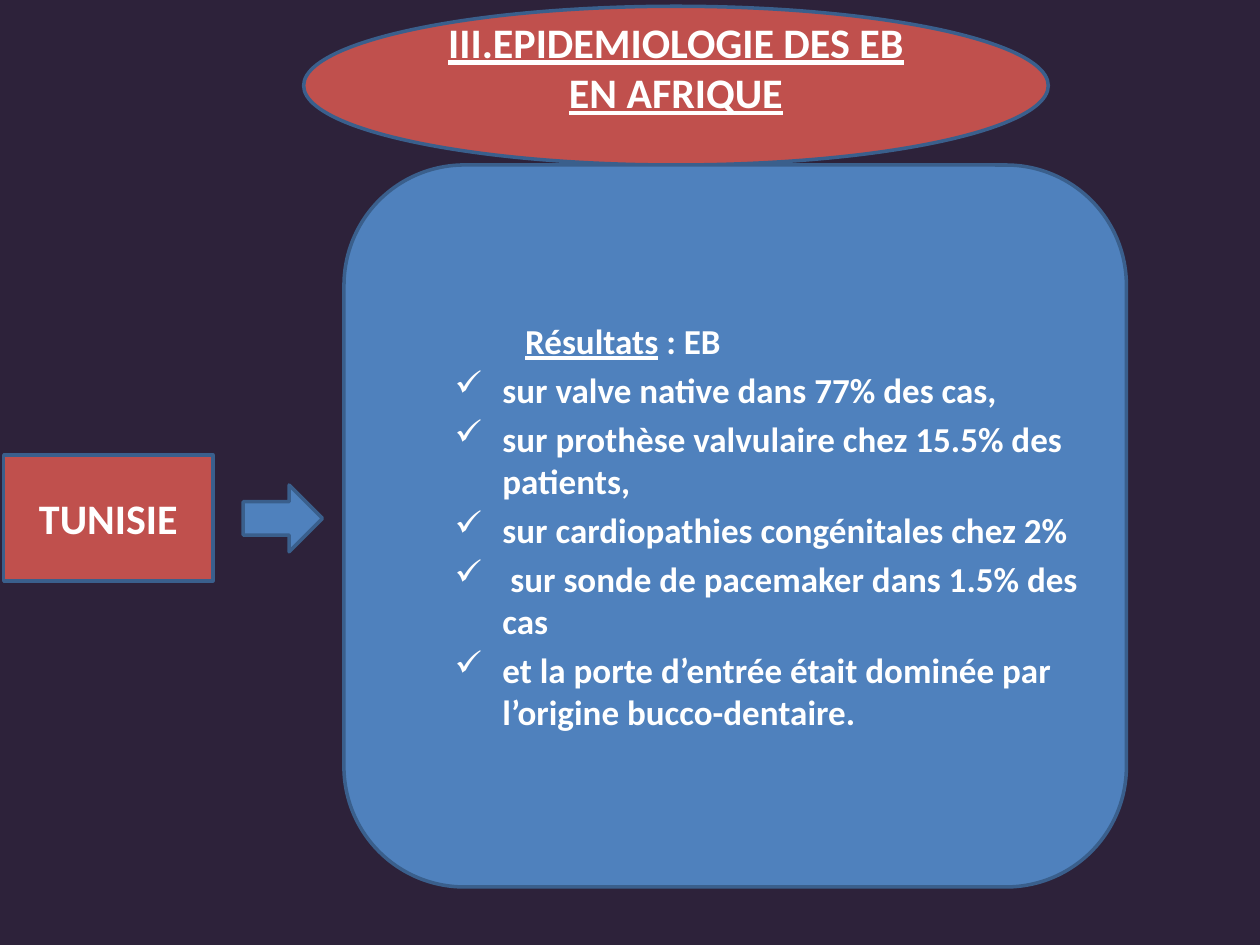
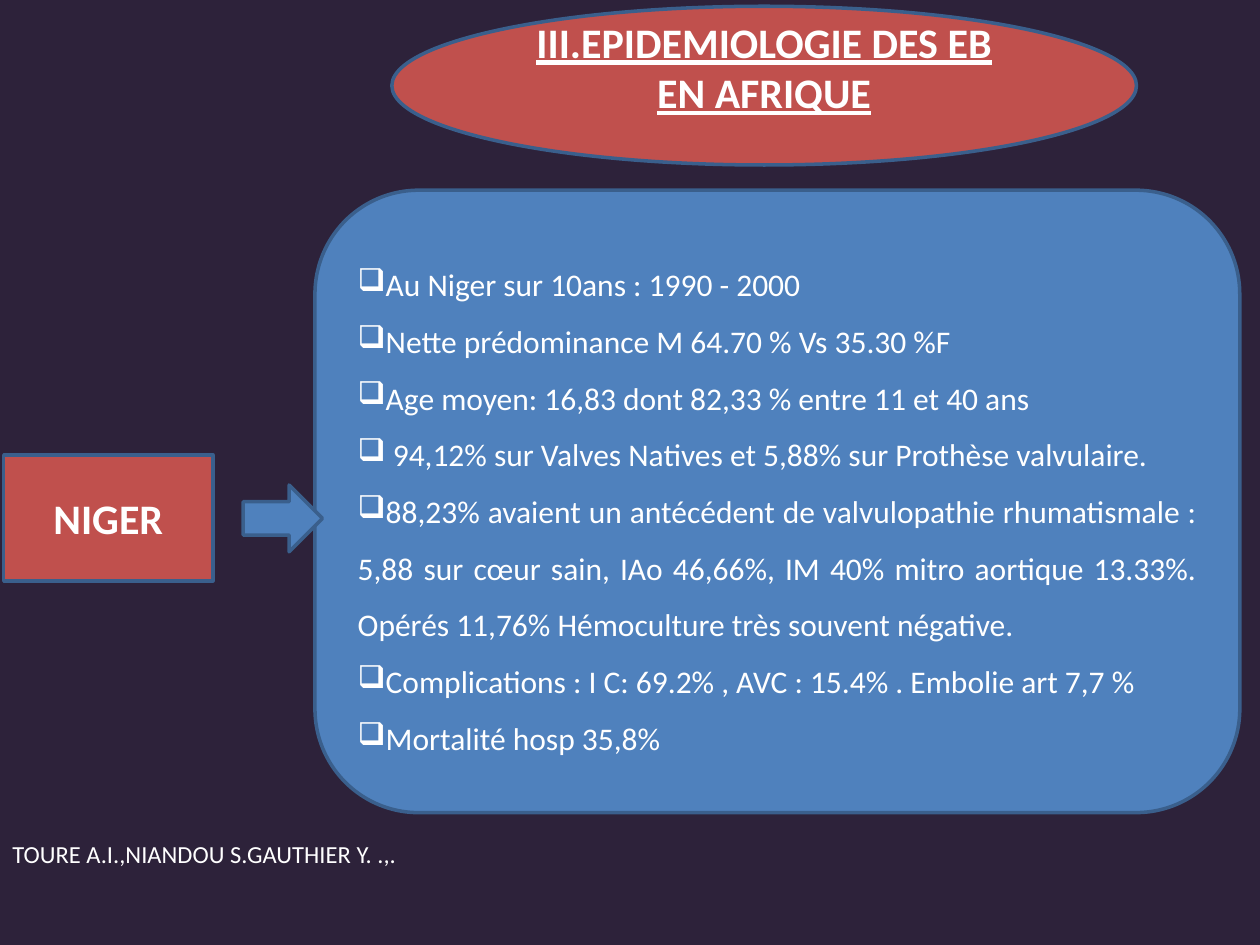
"""Two slides on the epidemiology of EB in Africa: Tunisia and Niger."""
from lxml import etree
from pptx import Presentation, util as u
from pptx.dml.color import RGBColor
from pptx.enum import shapes, text
from pptx.oxml.ns import qn

COLORS = {"bg": "2D223A", "red": "C0504D", "blue": "4F81BD", "line": "3A5F8C", "text": "FFFFFF"}
FONT = "Calibri"
TITLE = "III.EPIDEMIOLOGIE DES EB EN AFRIQUE"
SHAPE = shapes.MSO_SHAPE
ALIGN = text.PP_ALIGN

SLIDES = [
    {
        "country": "TUNISIE", "title_left": 2.41, "panel": (2.73, 1.31, 6.21, 5.73),
        "heading": ("Résultats", " : EB"), "bullet": "✓", "margin": 0.88, "indent": -0.38,
        "size": 20, "bold": True, "align": ALIGN.LEFT, "spacing": 1.0, "before": 4,
        "items": [
            "sur valve native dans 77% des cas,",
            "sur prothèse valvulaire chez 15.5% des patients,",
            "sur cardiopathies congénitales chez 2%",
            " sur sonde de pacemaker dans 1.5% des cas",
            "et la porte d’entrée était dominée par l’origine bucco-dentaire.",
        ],
        "source": None,
    },
    {
        "country": "NIGER", "title_left": 3.11, "panel": (2.5, 1.51, 7.34, 4.94),
        "heading": None, "bullet": "❑", "margin": 0, "indent": 0,
        "size": 18, "bold": False, "align": ALIGN.JUSTIFY, "spacing": 1.5, "before": 0,
        "items": [
            "Au Niger sur 10ans : 1990 - 2000",
            "Nette prédominance M 64.70 % Vs 35.30 %F",
            "Age moyen: 16,83 dont 82,33 % entre 11 et 40 ans",
            " 94,12% sur Valves Natives et 5,88% sur Prothèse valvulaire.",
            "88,23% avaient un antécédent de valvulopathie rhumatismale : 5,88 sur cœur sain, "
            "IAo 46,66%, IM 40% mitro aortique 13.33%. Opérés 11,76% Hémoculture très souvent négative.",
            "Complications : I C: 69.2% , AVC : 15.4% . Embolie art 7,7 %",
            "Mortalité hosp 35,8%",
        ],
        "source": "TOURE A.I.,NIANDOU S.GAUTHIER Y. .,.",
    },
]


def add_box(s, kind, box, fill):
    sp = s.shapes.add_shape(kind, *map(u.Inches, box))
    sp.shadow.inherit = False
    sp.fill.solid()
    sp.fill.fore_color.rgb = RGBColor.from_string(COLORS[fill])
    sp.line.color.rgb = RGBColor.from_string(COLORS["line"])
    sp.line.width = u.Pt(2)
    sp.text_frame.word_wrap = True
    sp.text_frame.vertical_anchor = text.MSO_ANCHOR.MIDDLE
    return sp


def style(p, size, bold=False, align=ALIGN.LEFT):
    p.alignment = align
    for r in p.runs:
        r.font.name, r.font.size, r.font.bold = FONT, u.Pt(size), bold
        r.font.color.rgb = RGBColor.from_string(COLORS["text"])


prs = Presentation()
prs.slide_width, prs.slide_height = u.Inches(10), u.Inches(7.5)

for data in SLIDES:
    s = prs.slides.add_slide(prs.slide_layouts[6])
    s.background.fill.solid()
    s.background.fill.fore_color.rgb = RGBColor.from_string(COLORS["bg"])

    title = add_box(s, SHAPE.OVAL, (data["title_left"], 0.05, 5.91, 1.26), "red")
    tf = title.text_frame
    tf.margin_bottom = u.Inches(0.35)
    tf.text = TITLE
    style(tf.paragraphs[0], 24, True, ALIGN.CENTER)
    tf.paragraphs[0].runs[0].font.underline = True

    panel = add_box(s, SHAPE.ROUNDED_RECTANGLE, data["panel"], "blue")
    tf = panel.text_frame
    p = tf.paragraphs[0]
    if data["heading"]:
        for part in data["heading"]:
            p.add_run().text = part
        style(p, data["size"], data["bold"])
        p.runs[0].font.underline = True
        p._p.get_or_add_pPr().set("marL", str(u.Inches(1.06)))
    for i, item in enumerate(data["items"]):
        if i or data["heading"]:
            p = tf.add_paragraph()
            p.space_before = u.Pt(data["before"])
        p.text = item
        p.line_spacing = data["spacing"]
        pPr = p._p.get_or_add_pPr()
        pPr.set("marL", str(u.Inches(data["margin"])))
        pPr.set("indent", str(u.Inches(data["indent"])))
        etree.SubElement(pPr, qn("a:buChar")).set("char", data["bullet"])
        style(p, data["size"], data["bold"], data["align"])

    country = add_box(s, SHAPE.RECTANGLE, (0.03, 3.61, 1.66, 1), "red")
    country.text_frame.text = data["country"]
    style(country.text_frame.paragraphs[0], 24, True, ALIGN.CENTER)
    add_box(s, SHAPE.RIGHT_ARROW, (1.93, 3.85, 0.63, 0.53), "blue")

    if data["source"]:
        source = s.shapes.add_textbox(*map(u.Inches, (0, 6.61, 5, 0.34)))
        tf = source.text_frame
        tf.word_wrap = True
        tf.auto_size = text.MSO_AUTO_SIZE.SHAPE_TO_FIT_TEXT
        tf.text = data["source"]
        style(tf.paragraphs[0], 14)

prs.save("out.pptx")
